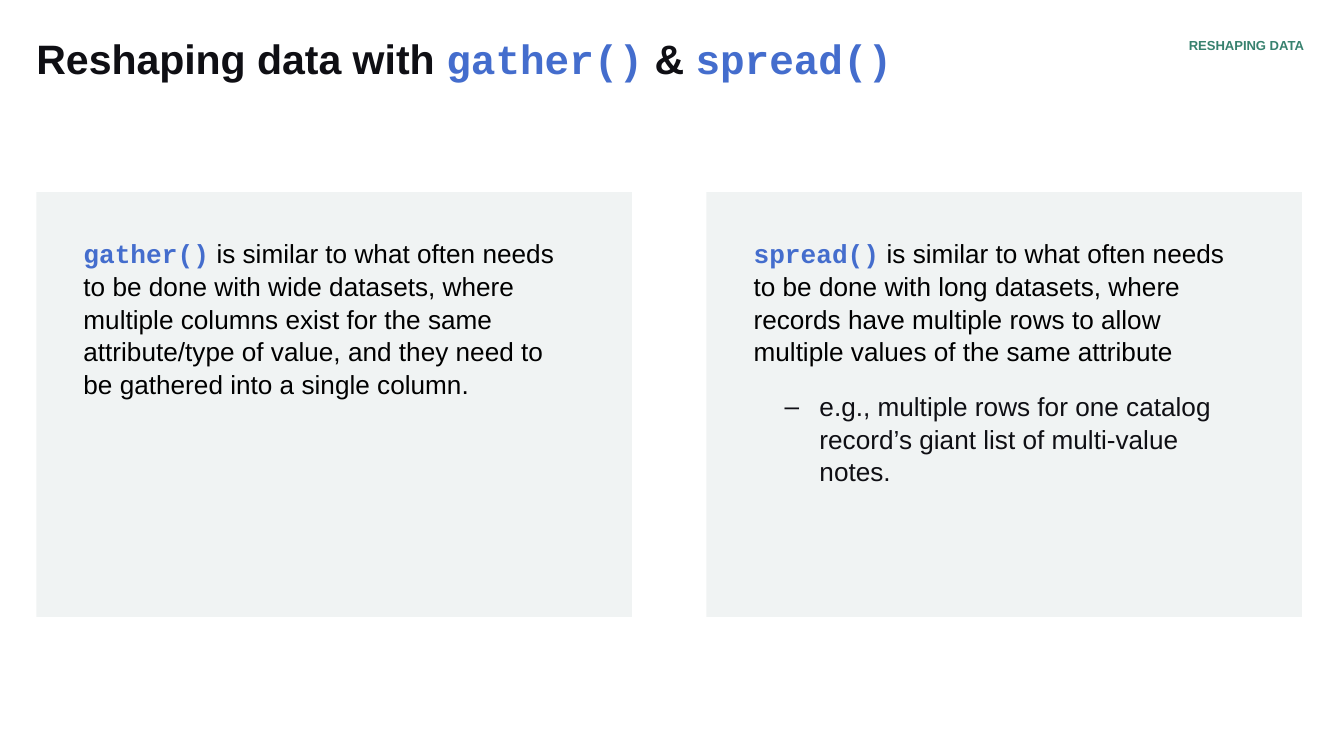
from lxml.etree import SubElement
from pptx import Presentation
from pptx.dml.color import RGBColor
from pptx.enum.shapes import MSO_SHAPE
from pptx.enum.text import MSO_ANCHOR, MSO_AUTO_SIZE, PP_ALIGN
from pptx.oxml.ns import qn
from pptx.util import Pt

INK = RGBColor(0x0F, 0x0F, 0x14)
BLACK = RGBColor(0x00, 0x00, 0x00)
BLUE = RGBColor(0x44, 0x6D, 0xCD)
GREEN = RGBColor(0x37, 0x81, 0x6E)
PANEL = RGBColor(0xF0, 0xF3, 0xF3)
SANS = "Arial"
MONO = "Courier New"

MARGIN = 19.5
PANEL_W, PANEL_H = 319, 227.5
PANEL_TOP = 103
PANEL_STEP = 359


def place(sp, left, top, width, height, insets):
    sp.left, sp.top = Pt(left), Pt(top)
    sp.width, sp.height = Pt(width), Pt(height)
    tf = sp.text_frame
    tf.word_wrap = True
    tf.auto_size = MSO_AUTO_SIZE.NONE
    tf.vertical_anchor = MSO_ANCHOR.TOP
    tf.margin_left, tf.margin_top, tf.margin_right, tf.margin_bottom = map(Pt, insets)
    return tf


def add_run(p, text, size, color, font=SANS, bold=False):
    r = p.add_run()
    r.text = text
    r.font.size = Pt(size)
    r.font.name = font
    r.font.bold = bold
    r.font.color.rgb = color


def set_bullet(p, char=None, left=0, indent=0):
    pPr = p._p.get_or_add_pPr()
    pPr.set("marL", str(Pt(left)))
    pPr.set("indent", str(Pt(indent)))
    if char:
        clr = SubElement(pPr, qn("a:buClr"))
        SubElement(clr, qn("a:srgbClr"), val=str(INK))
        SubElement(pPr, qn("a:buFont"), typeface=SANS)
        SubElement(pPr, qn("a:buChar"), char=char)
    else:
        SubElement(pPr, qn("a:buNone"))


def format_paragraph(p, align=PP_ALIGN.LEFT, line=1.04, before=0, after=0):
    p.alignment = align
    p.line_spacing = line
    p.space_before, p.space_after = Pt(before), Pt(after)


def fill_title(title, left, top, width, height):
    tf = place(title, left, top, width, height, (0, 0, 7.2, 7.2))
    p = tf.paragraphs[0]
    format_paragraph(p, line=0.9)
    add_run(p, "Reshaping data with ", 22, INK, bold=True)
    add_run(p, "gather()", 22, BLUE, MONO, True)
    add_run(p, " & ", 22, INK, bold=True)
    add_run(p, "spread()", 22, BLUE, MONO, True)


def add_section_label(s, left, top, width, height):
    sp = s.shapes.add_textbox(0, 0, 0, 0)
    tf = place(sp, left, top, width, height, (0, 0, 0, 7.2))
    p = tf.paragraphs[0]
    format_paragraph(p, PP_ALIGN.RIGHT, 0.9)
    add_run(p, "RESHAPING DATA", 7, GREEN, bold=True)


def fill_panel(s, body, left, top, width, height, name, text, example=None):
    panel = s.shapes.add_shape(MSO_SHAPE.RECTANGLE, Pt(left), Pt(top), Pt(width), Pt(height))
    panel.shadow.inherit = False
    panel.fill.solid()
    panel.fill.fore_color.rgb = PANEL
    panel.line.fill.background()
    body._element.addprevious(panel._element)

    tf = place(body, left + 25.2, top + 16.5, width - 51, height - 43, (0, 7.2, 7.2, 7.2))
    p = tf.paragraphs[0]
    set_bullet(p)
    format_paragraph(p)
    add_run(p, name, 14, BLUE, MONO, True)
    add_run(p, text, 14, BLACK)
    if example:
        p = tf.add_paragraph()
        p.level = 1
        set_bullet(p, "–", 35.3, -18.7)
        format_paragraph(p, before=12, after=12)
        add_run(p, example, 14, INK)


def main():
    prs = Presentation()
    prs.slide_width, prs.slide_height = Pt(720), Pt(405)
    s = prs.slides.add_slide(prs.slide_layouts[3])
    title, gather, spread = s.placeholders

    fill_title(title, MARGIN, 21, 575, 42.5)
    add_section_label(s, 545, 21, 153.5, 11.5)
    fill_panel(s, gather, MARGIN, PANEL_TOP, PANEL_W, PANEL_H, "gather()",
               " is similar to what often needs to be done with wide datasets, where multiple "
               "columns exist for the same attribute/type of value, and they need to be "
               "gathered into a single column.")
    fill_panel(s, spread, MARGIN + PANEL_STEP, PANEL_TOP, PANEL_W, PANEL_H, "spread()",
               " is similar to what often needs to be done with long datasets, where records "
               "have multiple rows to allow multiple values of the same attribute",
               "e.g., multiple rows for one catalog record’s giant list of multi-value notes.")
    prs.save("out.pptx")


if __name__ == "__main__":
    main()
